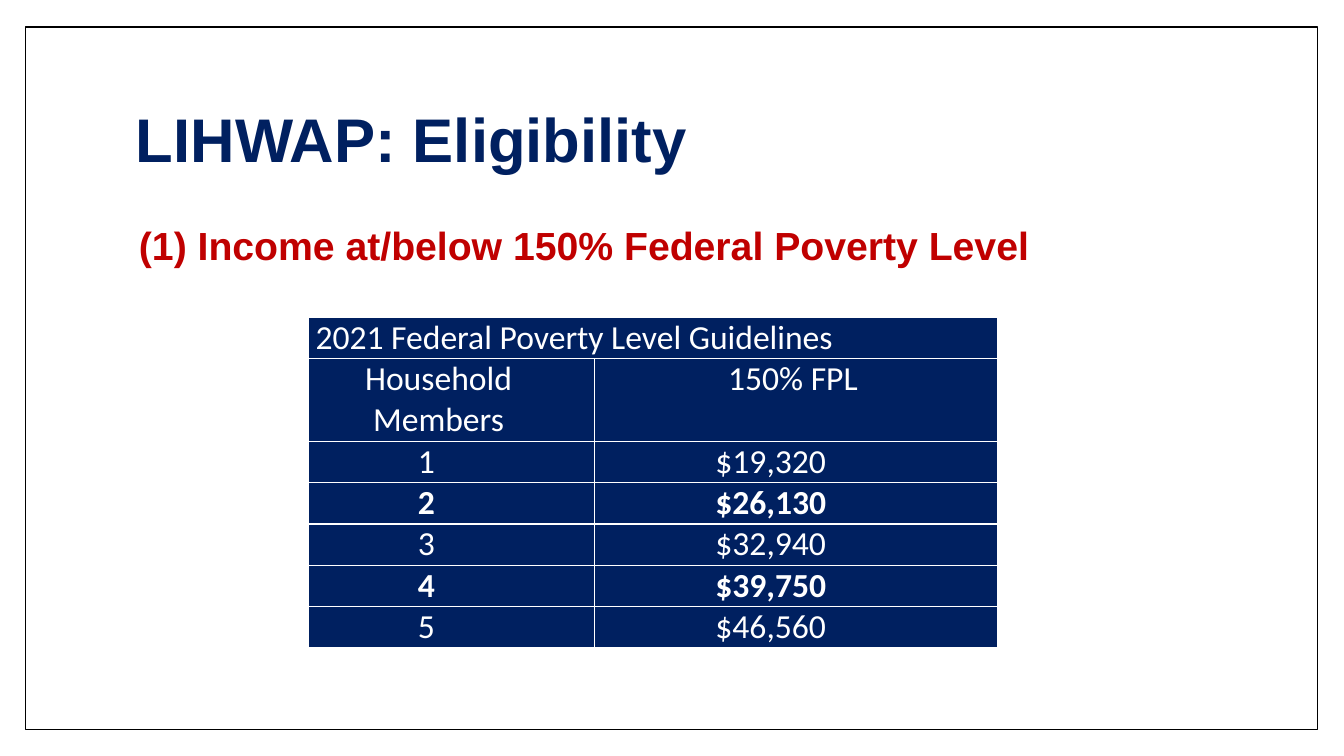
"""Build the LIHWAP income eligibility slide."""
import dataclasses

import pptx
import pptx.dml.color
import pptx.enum.shapes
import pptx.enum.text
import pptx.oxml
import pptx.oxml.ns
import pptx.util

TITLE = "LIHWAP: Eligibility"
RULE = "(1) Income at/below 150% Federal Poverty Level"
CAPTION = "2021 Federal Poverty Level Guidelines"
HEADS = ("Household Members", "150% FPL")
LIMITS = [
    ("1", "$19,320"),
    ("2", "$26,130"),
    ("3", "$32,940"),
    ("4", "$39,750"),
    ("5", "$46,560"),
]
BOLD = {"2", "4"}

WIDE, HIGH = 13.33, 7.5
FRAME = (0.25, 0.27, 12.82, 6.97)
HEAD = (1.25, 0.67, 10.8, 1.48)
LEAD = (1.28, 2.15, 10.8, 0.67)
GRID = (3.06, 3.15)
COLS = (2.84, 3.99)
ROW = 0.41
PAD = 0.07
HEAD_PADS = (0.33, 0.13)
BODY_PAD = 0.57


@dataclasses.dataclass(frozen=True)
class Theme:
    navy: str = "002060"
    red: str = "C00000"
    white: str = "FFFFFF"
    black: str = "000000"
    sans: str = "Arial"
    body: str = "Calibri"
    title: int = 44
    lead: int = 28
    cell: int = 24


THEME = Theme()
ALIGN = pptx.enum.text.PP_ALIGN
ANCHOR = pptx.enum.text.MSO_ANCHOR


def rgb(code):
    return pptx.dml.color.RGBColor.from_string(code)


def inches(box):
    return [pptx.util.Inches(side) for side in box]


def style(para, face, size, color, bold):
    font = para.font
    font.name, font.size, font.bold = face, pptx.util.Pt(size), bold
    font.color.rgb = rgb(color)


def label(slide, box, text, size, color, anchor):
    frame = slide.shapes.add_textbox(*inches(box)).text_frame
    frame.word_wrap = True
    frame.vertical_anchor = anchor
    frame.text = text
    style(frame.paragraphs[0], THEME.sans, size, color, True)
    return frame.paragraphs[0]


def edge(cell):
    props = cell._tc.get_or_add_tcPr()
    space = pptx.oxml.ns.nsdecls("a")
    for spot, side in enumerate("LRTB"):
        line = pptx.oxml.parse_xml(
            f'<a:ln{side} {space} w="12700"><a:solidFill>'
            f'<a:srgbClr val="{THEME.white}"/></a:solidFill></a:ln{side}>')
        props.insert(spot, line)


def fill(cell, text, align, right, bold=False):
    cell.margin_left, cell.margin_right = inches((PAD, right))
    cell.margin_top = cell.margin_bottom = 0
    cell.text = text
    para = cell.text_frame.paragraphs[0]
    para.alignment = align
    style(para, THEME.body, THEME.cell, THEME.white, bold)


def build_table(slide):
    count = len(LIMITS) + 2
    size = (sum(COLS), ROW * (count + 1))
    table = slide.shapes.add_table(
        count, len(COLS), *inches(GRID + size)).table
    table.horz_banding = False
    for col, width in zip(table.columns, COLS):
        col.width = pptx.util.Inches(width)
    for index, row in enumerate(table.rows):
        row.height = pptx.util.Inches(ROW * (2 if index == 1 else 1))
    for cell in table.iter_cells():
        cell.fill.solid()
        cell.fill.fore_color.rgb = rgb(THEME.navy)
        edge(cell)
    table.cell(0, 0).merge(table.cell(0, 1))
    fill(table.cell(0, 0), CAPTION, ALIGN.JUSTIFY, PAD)
    for col, (text, pad) in enumerate(zip(HEADS, HEAD_PADS)):
        fill(table.cell(1, col), text, ALIGN.CENTER, pad)
    for row, pair in enumerate(LIMITS, 2):
        for col, text in enumerate(pair):
            fill(table.cell(row, col), text, ALIGN.CENTER, BODY_PAD,
                 pair[0] in BOLD)


def main():
    deck = pptx.Presentation()
    deck.slide_width, deck.slide_height = inches((WIDE, HIGH))
    slide = deck.slides.add_slide(deck.slide_layouts[6])
    frame = slide.shapes.add_shape(
        pptx.enum.shapes.MSO_SHAPE.RECTANGLE, *inches(FRAME))
    frame.shadow.inherit = False
    frame.fill.solid()
    frame.fill.fore_color.rgb = rgb(THEME.white)
    frame.line.color.rgb = rgb(THEME.black)
    frame.line.width = pptx.util.Pt(1)
    title = label(slide, HEAD, TITLE, THEME.title, THEME.navy, ANCHOR.MIDDLE)
    title.line_spacing = 0.9
    label(slide, LEAD, RULE, THEME.lead, THEME.red, ANCHOR.TOP)
    build_table(slide)
    deck.save("out.pptx")


if __name__ == "__main__":
    main()
